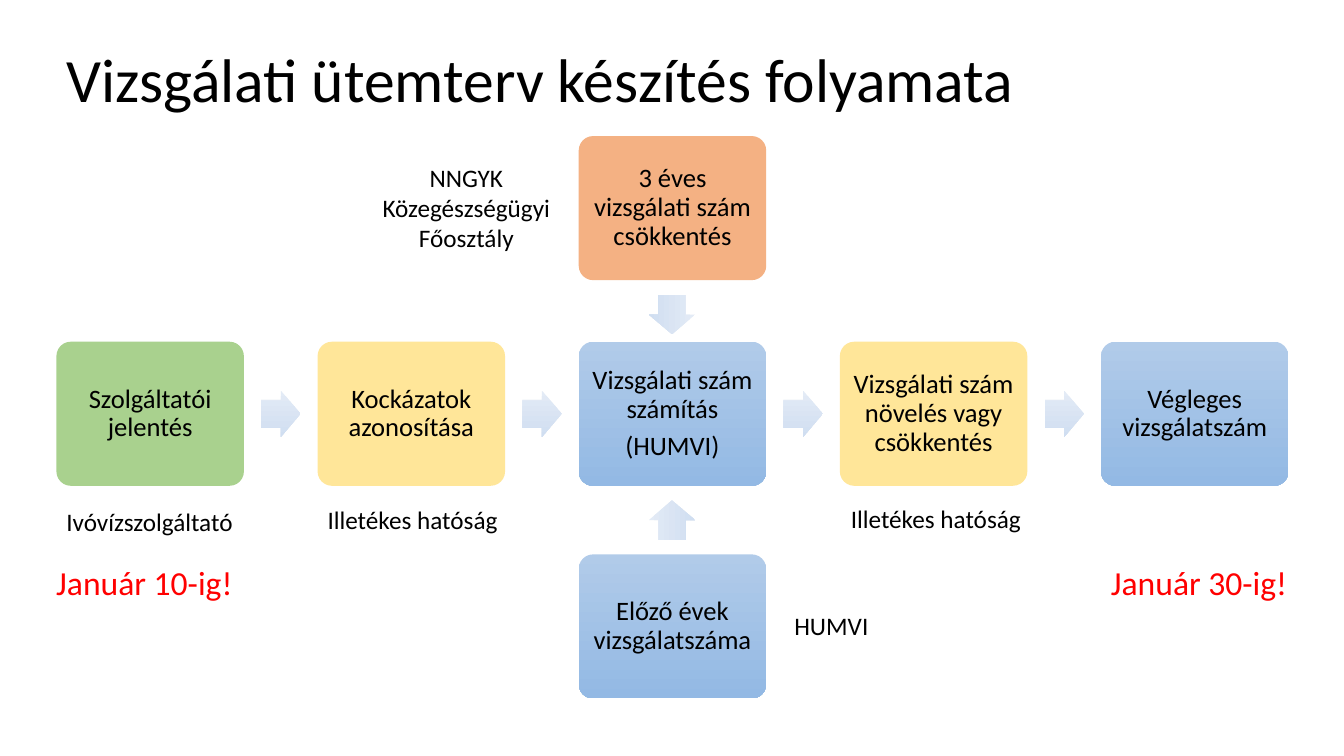
from dataclasses import dataclass

from pptx import Presentation
from pptx.dml.color import RGBColor
from pptx.enum.shapes import MSO_SHAPE
from pptx.enum.text import MSO_ANCHOR, MSO_AUTO_SIZE, PP_ALIGN
from pptx.util import Inches, Pt

ROUNDED = MSO_SHAPE.ROUNDED_RECTANGLE
ARROW = MSO_SHAPE.RIGHT_ARROW
MIDDLE, TOP = MSO_ANCHOR.MIDDLE, MSO_ANCHOR.TOP
CENTER, LEFT = PP_ALIGN.CENTER, PP_ALIGN.LEFT
GROW, FIXED = MSO_AUTO_SIZE.SHAPE_TO_FIT_TEXT, MSO_AUTO_SIZE.NONE


@dataclass(frozen=True)
class Theme:
    """Colours and type sizes of the slide."""
    font: str = "Calibri"
    title: int = 44
    deadline: int = 24
    step: int = 19
    label: int = 18
    ink: str = "000000"
    alert: str = "FF0000"
    green: tuple = ("A9D18E",)
    yellow: tuple = ("FFE699",)
    orange: tuple = ("F4B183",)
    blue: tuple = ("B1CBE9", "93B9E4")
    arrow: tuple = ("E3EBF6", "D0DEF1")


THEME = Theme()
PAGE_WIDTH, PAGE_HEIGHT = 13.33, 7.5
MARGIN, COLUMN_PITCH = 0.56, 2.59
ROW_TOPS = (1.35, 3.39, 5.5)
STEP_WIDTH, STEP_HEIGHT = 1.86, 1.43
ARROW_WIDTH, ARROW_HEIGHT, ARROW_GAP = 0.39, 0.46, 0.17

STEPS = (
    (0, 1, THEME.green, ("Szolgáltatói jelentés",)),
    (1, 1, THEME.yellow, ("Kockázatok azonosítása",)),
    (2, 1, THEME.blue, ("Vizsgálati szám számítás", "(HUMVI)")),
    (3, 1, THEME.yellow, ("Vizsgálati szám növelés vagy csökkentés",)),
    (4, 1, THEME.blue, ("Végleges vizsgálatszám",)),
    (2, 2, THEME.blue, ("Előző évek vizsgálatszáma",)),
    (2, 0, THEME.orange, ("3 éves vizsgálati szám csökkentés",)),
)
VERTICAL_ARROWS = ((3.12, 90), (5.16, 270))
LABELS = (
    (0.56, 4.97, 1.87, "Ivóvízszolgáltató"),
    (3.15, 4.95, 1.91, "Illetékes hatóság"),
    (8.34, 4.94, 1.91, "Illetékes hatóság"),
    (7.78, 6.01, 0.94, "HUMVI"),
)
DEADLINES = ((0.46, "Január 10-ig!"), (10.92, "Január 30-ig!"))


def column_left(column):
    """Return the left edge of a column of steps."""
    return MARGIN + column * COLUMN_PITCH


def set_values(target, values):
    """Set attributes of an object from a dict."""
    for name, value in values.items():
        setattr(target, name, value)


def write(frame, lines, size, color=THEME.ink, align=LEFT, **spacing):
    """Write lines as paragraphs of a text frame."""
    for index, line in enumerate(lines):
        para = frame.paragraphs[0] if index == 0 else frame.add_paragraph()
        set_values(para, {"alignment": align, **spacing})
        span = para.add_run()
        span.text = line
        set_values(span.font, {"name": THEME.font, "size": Pt(size)})
        span.font.color.rgb = RGBColor.from_string(color)


def paint(shape, colors):
    """Fill a shape with one colour or a downward gradient."""
    shape.shadow.inherit = False
    shape.line.fill.background()
    if len(colors) == 1:
        shape.fill.solid()
        shape.fill.fore_color.rgb = RGBColor.from_string(colors[0])
        return
    shape.fill.gradient()
    shape.fill.gradient_angle = 270
    for stop, color in zip(shape.fill.gradient_stops, colors):
        stop.color.rgb = RGBColor.from_string(color)


def add_preset(page, kind, area, colors, adjustments):
    """Add a painted preset shape."""
    shape = page.shapes.add_shape(kind, *map(Inches, area))
    for index, value in enumerate(adjustments):
        shape.adjustments[index] = value
    paint(shape, colors)
    return shape


def add_step(page, column, row, colors, lines):
    """Add a rounded process step in a grid cell."""
    area = (column_left(column), ROW_TOPS[row], STEP_WIDTH, STEP_HEIGHT)
    box = add_preset(page, ROUNDED, area, colors, (0.1,))
    sides = ("left", "right", "top", "bottom")
    set_values(box.text_frame, {
        "word_wrap": True, "vertical_anchor": MIDDLE,
        **{f"margin_{side}": Inches(0.08) for side in sides}})
    write(box.text_frame, lines, THEME.step, align=CENTER,
          line_spacing=0.9, space_after=Pt(6))


def add_arrow(page, center_x, center_y, rotation=0):
    """Add a block arrow around a centre point."""
    area = (center_x - ARROW_WIDTH / 2, center_y - ARROW_HEIGHT / 2,
            ARROW_WIDTH, ARROW_HEIGHT)
    arrow = add_preset(page, ARROW, area, THEME.arrow, (0.6, 0.5))
    arrow.rotation = rotation


def add_text(page, area, text, size, color=THEME.ink, align=LEFT,
             wrap=False, anchor=TOP, fit=GROW, **spacing):
    """Add a text box with one paragraph."""
    box = page.shapes.add_textbox(*map(Inches, area))
    set_values(box.text_frame, {
        "word_wrap": wrap, "vertical_anchor": anchor, "auto_size": fit})
    write(box.text_frame, (text,), size, color, align, **spacing)


def main():
    """Build the process slide and save it."""
    deck = Presentation()
    set_values(deck, {"slide_width": Inches(PAGE_WIDTH),
                      "slide_height": Inches(PAGE_HEIGHT)})
    page = deck.slides.add_slide(deck.slide_layouts[6])
    add_text(page, (MARGIN, 0.4, 11.86, 0.84),
             "Vizsgálati ütemterv készítés folyamata", THEME.title,
             wrap=True, anchor=MIDDLE, fit=FIXED, line_spacing=0.9)
    for step in STEPS:
        add_step(page, *step)
    for column in range(4):
        center_x = column_left(column) + STEP_WIDTH + ARROW_GAP + ARROW_WIDTH / 2
        add_arrow(page, center_x, ROW_TOPS[1] + STEP_HEIGHT / 2)
    for center_y, rotation in VERTICAL_ARROWS:
        add_arrow(page, PAGE_WIDTH / 2, center_y, rotation)
    for left, top, width, text in LABELS:
        add_text(page, (left, top, width, 0.4), text, THEME.label)
    add_text(page, (3.67, 1.56, 1.91, 1.01), "NNGYK Közegészségügyi Főosztály",
             THEME.label, align=CENTER, wrap=True)
    for left, text in DEADLINES:
        add_text(page, (left, 5.53, 1.97, 0.5), text, THEME.deadline, THEME.alert)
    deck.save("out.pptx")


if __name__ == "__main__":
    main()
